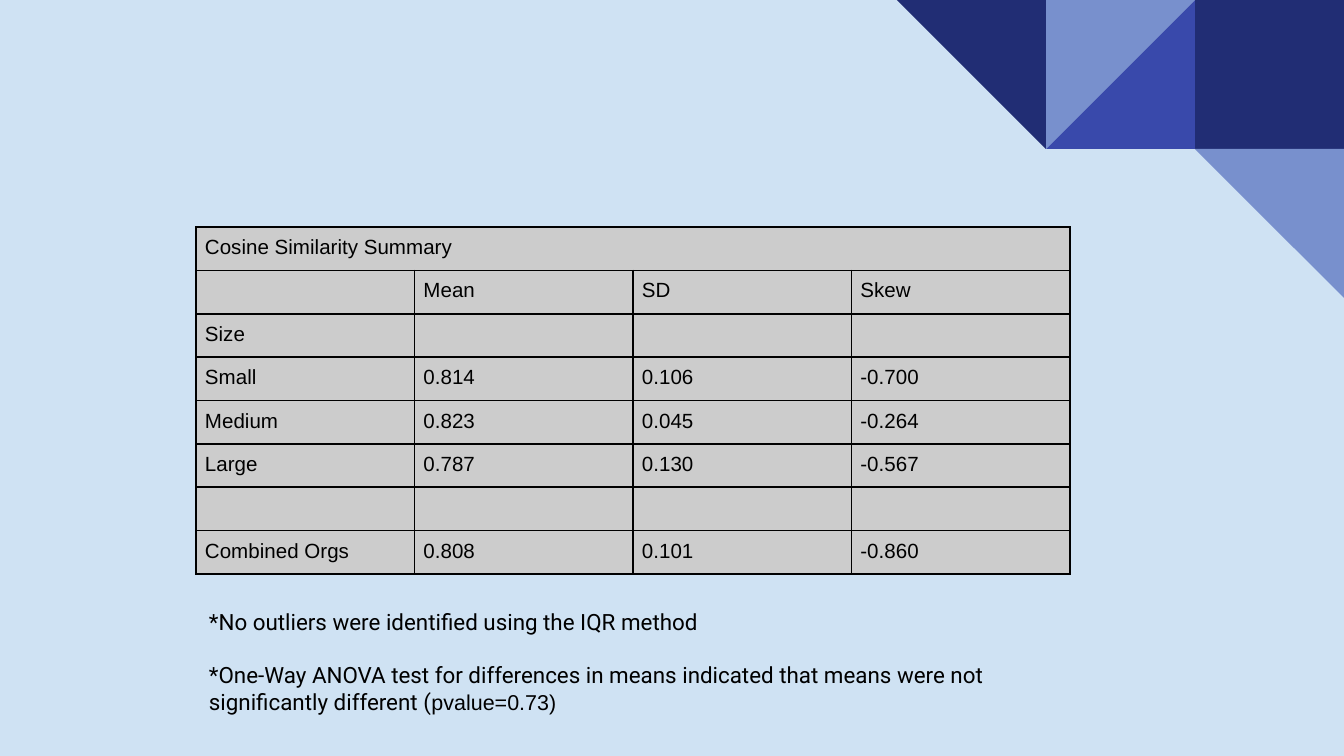
from lxml.etree import SubElement
from pptx import Presentation
from pptx.dml.color import RGBColor
from pptx.enum.shapes import MSO_SHAPE as SHAPE
from pptx.oxml.ns import qn
from pptx.util import Pt

SCALE = 914400 / 134.4
SKY = RGBColor(0xCF, 0xE2, 0xF3)
NAVY = RGBColor(0x21, 0x2D, 0x74)
INDIGO = RGBColor(0x39, 0x49, 0xAB)
PERIWINKLE = RGBColor(0x78, 0x90, 0xCD)
GREY = RGBColor(0xCC, 0xCC, 0xCC)
BLACK = RGBColor(0, 0, 0)

TILE = 149
TILES = [
    (SHAPE.RECTANGLE, 2, 0, NAVY, 0, False),
    (SHAPE.RIGHT_TRIANGLE, 1, 0, INDIGO, 0, True),
    (SHAPE.RIGHT_TRIANGLE, 1, 0, PERIWINKLE, 180, True),
    (SHAPE.RIGHT_TRIANGLE, 0, 0, NAVY, 180, False),
    (SHAPE.RIGHT_TRIANGLE, 2, 1, PERIWINKLE, 180, False),
]
ROWS = [
    ("Cosine Similarity Summary", "", "", ""),
    ("", "Mean", "SD", "Skew"),
    ("Size", "", "", ""),
    ("Small", "0.814", "0.106", "-0.700"),
    ("Medium", "0.823", "0.045", "-0.264"),
    ("Large", "0.787", "0.130", "-0.567"),
    ("", "", "", ""),
    ("Combined Orgs", "0.808", "0.101", "-0.860"),
]


def px(n):
    return round(n * SCALE)


def add_text(p, text, font="Arial", size=11, color=BLACK):
    r = p.add_run()
    r.text = text
    r.font.name = font
    r.font.size = Pt(size)
    r.font.color.rgb = color


def set_insets(frame, inset):
    for side in ("left", "right", "top", "bottom"):
        setattr(frame, f"margin_{side}", px(inset))


def add_tile(s, kind, col, row, color, rotation, flipped):
    left = 1344 - (3 - col) * TILE
    sp = s.shapes.add_shape(kind, px(left), px(row * TILE), px(TILE), px(TILE))
    sp.shadow.inherit = False
    sp.fill.solid()
    sp.fill.fore_color.rgb = color
    sp.line.fill.background()
    sp.rotation = rotation
    if flipped:
        sp.element.spPr.find(qn("a:xfrm")).set("flipH", "1")


def add_borders(cell, color=BLACK, width=1):
    tcPr = cell._tc.get_or_add_tcPr()
    for i, side in enumerate(("lnL", "lnR", "lnT", "lnB")):
        ln = SubElement(tcPr, qn(f"a:{side}"), w=str(Pt(width)))
        fill = SubElement(ln, qn("a:solidFill"))
        SubElement(fill, qn("a:srgbClr"), val=str(color))
        tcPr.insert(i, ln)


def fill_cell(cell, text):
    set_insets(cell, 9)
    cell.fill.solid()
    cell.fill.fore_color.rgb = GREY
    add_borders(cell)
    p = cell.text_frame.paragraphs[0]
    if text:
        add_text(p, text)
    else:
        SubElement(p._p, qn("a:endParaRPr"), sz="1100")


def add_summary_table(s):
    frame = s.shapes.add_table(len(ROWS), 4, px(196), px(227), px(874), px(347))
    table = frame.table
    table.first_row = False
    table.horz_banding = False
    for i, row in enumerate(ROWS):
        for j, text in enumerate(row):
            fill_cell(table.cell(i, j), text)
    table.cell(0, 0).merge(table.cell(0, 3))


def add_notes_box(s):
    tf = s.shapes.add_textbox(px(196), px(595), px(874), px(136)).text_frame
    tf.word_wrap = True
    set_insets(tf, 13)
    add_text(tf.paragraphs[0], "*No outliers were identified using the IQR method",
             font="Roboto", size=12)
    p = tf.add_paragraph()
    p.space_before = Pt(14)
    add_text(p, "*One-Way ANOVA test for differences in means indicated that "
             "means were not significantly different (", font="Roboto", size=12)
    add_text(p, "pvalue=0.73)", size=11.5)


def main():
    prs = Presentation()
    prs.slide_width, prs.slide_height = px(1344), px(756)
    s = prs.slides.add_slide(prs.slide_layouts[6])
    s.background.fill.solid()
    s.background.fill.fore_color.rgb = SKY
    for tile in TILES:
        add_tile(s, *tile)
    add_summary_table(s)
    add_notes_box(s)
    prs.save("out.pptx")


if __name__ == "__main__":
    main()
